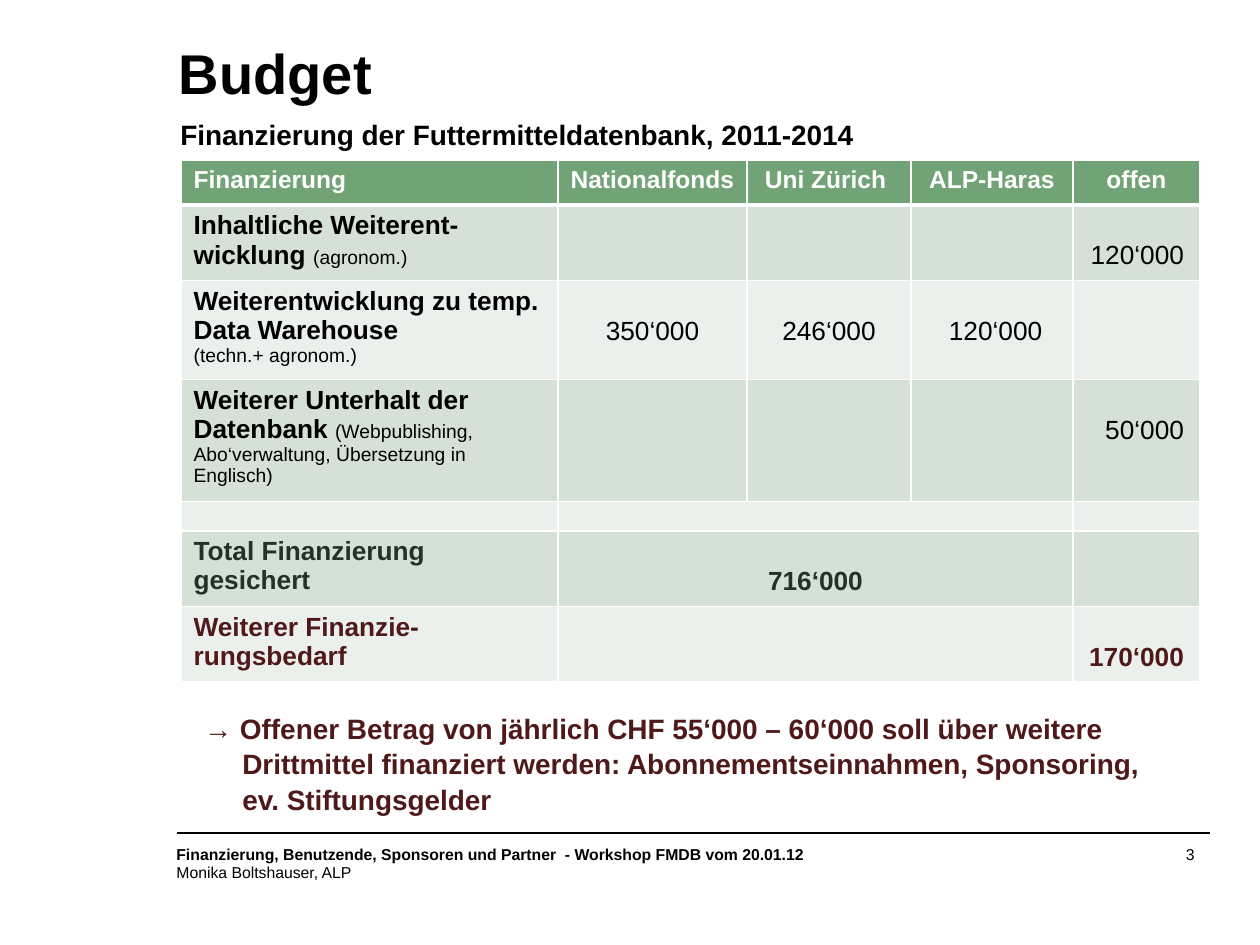
from copy import deepcopy

from lxml import etree
from pptx import Presentation
from pptx import util as u
from pptx.dml.color import RGBColor
from pptx.enum import shapes, text
from pptx.oxml.ns import qn

SCALE = 914400 / 126
BLACK = RGBColor(0x00, 0x00, 0x00)
WHITE = RGBColor(0xFF, 0xFF, 0xFF)
GREEN = RGBColor(0x72, 0xA3, 0x76)
BANDS = (RGBColor(0xEB, 0xF0, 0xEC), RGBColor(0xD5, 0xE0, 0xD6))
DARK_GREEN = RGBColor(0x21, 0x33, 0x22)
DARK_RED = RGBColor(0x4F, 0x19, 0x19)

LEFT, CENTER, RIGHT = text.PP_ALIGN.LEFT, text.PP_ALIGN.CENTER, text.PP_ALIGN.RIGHT


def px(value):
    return u.Emu(round(value * SCALE))


class Page:
    def __init__(self, deck):
        self.font = "Arial"
        self.slide = deck.slides.add_slide(deck.slide_layouts[5])

    def add_spans(self, para, spans, align=LEFT, spacing=None):
        para.alignment = align
        if spacing:
            para.line_spacing = spacing
        for content, size, bold, color in spans:
            style = {"name": self.font, "size": u.Pt(size), "bold": bold}
            for index, line in enumerate(content.split("\n")):
                if index:
                    para.add_line_break()
                    para._p.findall(qn("a:br"))[-1].append(deepcopy(span.font._element))
                if line:
                    span = para.add_run()
                    span.text = line
                    for name, value in style.items():
                        setattr(span.font, name, value)
                    span.font.color.rgb = color

    def frame(self, box, inset=None, anchor=text.MSO_ANCHOR.TOP):
        frame = box.text_frame
        frame.word_wrap = True
        frame.vertical_anchor = anchor
        if inset is not None:
            for side in ("left", "top", "right", "bottom"):
                setattr(frame, f"margin_{side}", px(inset))
        return frame.paragraphs[0]

    def title(self, content, *place):
        box = self.slide.shapes.title
        for name, value in zip(("left", "top", "width", "height"), place):
            setattr(box, name, px(value))
        para = self.frame(box, 0, text.MSO_ANCHOR.BOTTOM)
        self.add_spans(para, [(content, 32, True, BLACK)], spacing=0.9)

    def textbox(self, place, spans, inset=None, hanging=0, **layout):
        box = self.slide.shapes.add_textbox(*map(px, place))
        para = self.frame(box, inset)
        if hanging:
            properties = para._p.get_or_add_pPr()
            properties.set("marL", str(px(hanging)))
            properties.set("indent", str(-px(hanging)))
        self.add_spans(para, spans, **layout)

    def line(self, x1, y1, x2, y2):
        line = self.slide.shapes.add_connector(
            shapes.MSO_CONNECTOR.STRAIGHT, *map(px, (x1, y1, x2, y2)))
        line.line.color.rgb = BLACK
        line.line.width = u.Pt(0.75)
        etree.SubElement(line._element.spPr, qn("a:effectLst"))

    def borders(self, cell, header):
        properties = cell._tc.get_or_add_tcPr()
        for index, side in enumerate(("lnL", "lnR", "lnT", "lnB")):
            width = 3 if header and side == "lnB" else 1
            edge = etree.Element(qn(f"a:{side}"), w=str(u.Pt(width)))
            fill = etree.SubElement(edge, qn("a:solidFill"))
            etree.SubElement(fill, qn("a:srgbClr"), val=str(WHITE))
            properties.insert(index, edge)

    def table(self, left, top, widths, heights, rows):
        table = self.slide.shapes.add_table(
            len(heights), len(widths),
            *map(px, (left, top, sum(widths), sum(heights)))).table
        for column, width in zip(table.columns, widths):
            column.width = px(width)
        for row, height in zip(table.rows, heights):
            row.height = px(height)
        last = len(widths) - 1
        for y, contents in enumerate(rows):
            for x in range(len(widths)):
                cell = table.cell(y, x)
                cell.fill.solid()
                cell.fill.fore_color.rgb = BANDS[y % 2] if y else GREEN
                self.borders(cell, y == 0)
                para = cell.text_frame.paragraphs[0]
                if x not in contents:
                    etree.SubElement(para._p, qn("a:endParaRPr"), sz="800")
                    continue
                align = LEFT if x == 0 else CENTER
                if y and x:
                    cell.margin_top = px(36)
                    if x == last:
                        align = RIGHT
                        cell.margin_right = px(16)
                self.add_spans(para, contents[x], align)
        for y in range(4, len(rows)):
            table.cell(y, 1).merge(table.cell(y, 3))


def label(content, note="", color=BLACK):
    spans = [(content, 15, True, color)]
    return spans + [(note, 11, False, BLACK)] if note else spans


def amount(content, bold=False, color=BLACK):
    return [(content, 15, bold, color)]


def main():
    deck = Presentation()
    deck.slide_width, deck.slide_height = px(1260), px(945)
    page = Page(deck)

    page.line(1210, 833, 177, 833)
    page.textbox((887, 844, 312, 20), [("3 ", 9, False, BLACK)],
                 inset=0, align=RIGHT, spacing=1.05)
    page.textbox(
        (164, 838, 659, 33),
        [("Finanzierung, Benutzende, Sponsoren und Partner  - Workshop FMDB vom 20.01.12",
          9, True, BLACK)], spacing=1.05)
    page.textbox((164, 857, 294, 25), [("Monika Boltshauser, ALP", 9, False, BLACK)])
    page.title("Budget", 179, 43, 1028, 64)

    headers = ("Finanzierung", "Nationalfonds", "Uni Zürich ", "ALP-Haras", "offen")
    rows = [
        {x: [(name, 14, True, WHITE)] for x, name in enumerate(headers)},
        {0: label("Inhaltliche Weiterent-wicklung ", "(agronom.)"),
         4: amount("120‘000")},
        {0: label("Weiterentwicklung zu temp. Data Warehouse \n", "(techn.+ agronom.)"),
         1: amount("350‘000"), 2: amount("246‘000"), 3: amount(" 120‘000")},
        {0: label("Weiterer Unterhalt der Datenbank ",
                  "(Webpublishing, Abo‘verwaltung, Übersetzung in Englisch)"),
         4: amount("50‘000")},
        {},
        {0: label("Total Finanzierung gesichert", color=DARK_GREEN),
         1: amount("716‘000", True, DARK_GREEN)},
        {0: label("Weiterer Finanzie-rungsbedarf", color=DARK_RED),
         4: amount("170‘000", True, DARK_RED)},
    ]
    page.table(181, 160, (377, 189, 164, 162, 127), (45, 71, 93, 122, 29, 71, 71), rows)

    page.textbox((168, 110, 757, 47),
                 [("Finanzierung der Futtermitteldatenbank, 2011-2014", 16, True, BLACK)],
                 spacing=1.05)
    page.textbox(
        (192, 704, 1036, 115),
        [("→ Offener Betrag von jährlich CHF 55‘000 – 60‘000 soll über weitere\n"
          "Drittmittel finanziert werden: Abonnementseinnahmen, Sponsoring,\n"
          "ev. Stiftungsgelder", 16, True, DARK_RED)], hanging=38, spacing=1.05)

    deck.save("out.pptx")


if __name__ == "__main__":
    main()
